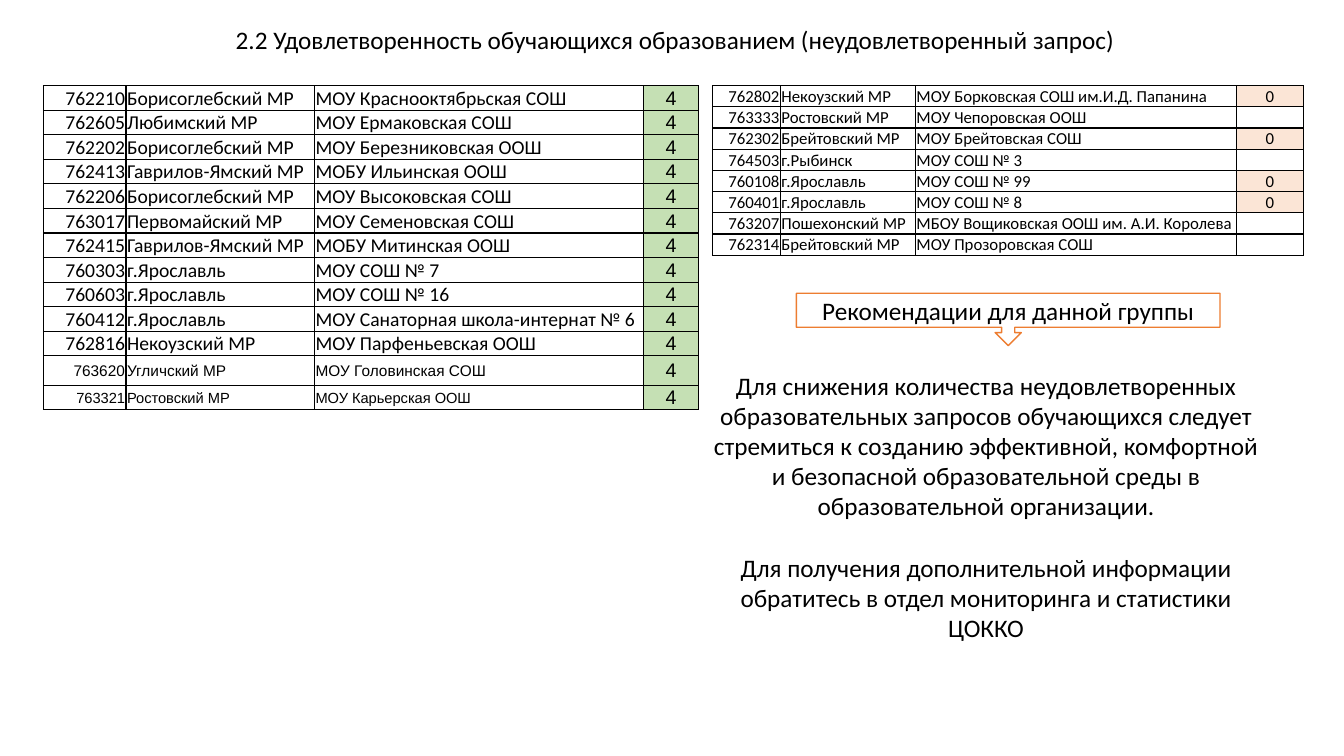
from lxml.etree import SubElement
from pptx import Presentation
from pptx.dml.color import RGBColor
from pptx.enum.shapes import MSO_SHAPE as Shape
from pptx.enum.text import MSO_ANCHOR as Anchor, MSO_AUTO_SIZE as AutoSize, PP_ALIGN as Align
from pptx.oxml.ns import qn
from pptx.util import Inches, Pt

COLORS = {"text": "000000", "paper": "FFFFFF", "accent": "ED7D31",
          "green": "C5E0B4", "peach": "FBE5D6"}

deck = Presentation()
deck.slide_width, deck.slide_height = Inches(13.33), Inches(7.5)
page = deck.slides.add_slide(deck.slide_layouts[6])


def share(left, top, width, height):
    """Turn percentages of the slide into lengths."""
    sides = (deck.slide_width, deck.slide_height) * 2
    return [round(side * part / 100) for side, part in zip(sides, (left, top, width, height))]


def write(para, text, align, size=18, face="Calibri"):
    para.alignment = align
    if not text:
        SubElement(para._p, qn("a:endParaRPr"), sz=str(size * 100))
        return
    span = para.add_run()
    span.text = text
    for name, value in {"size": Pt(size), "name": face}.items():
        setattr(span.font, name, value)
    span.font.color.rgb = RGBColor.from_string(COLORS["text"])


# Callout with the arrow
callout = page.shapes.add_shape(Shape.DOWN_ARROW_CALLOUT, *share(59.26, 38.8, 31.51, 6.93))
callout.shadow.inherit = False
callout.fill.solid()
callout.fill.fore_color.rgb = RGBColor.from_string(COLORS["paper"])
callout.line.color.rgb = RGBColor.from_string(COLORS["accent"])
callout.line.width = Pt(1)
callout.text_frame.word_wrap = True
callout.text_frame.vertical_anchor = Anchor.MIDDLE
write(callout.text_frame.paragraphs[0], "Рекомендации для данной группы", Align.CENTER)

# Title and recommendations
texts = [
    ((16.8, 2.53, 68.27, 5.33), Align.LEFT,
     ["2.2 Удовлетворенность обучающихся образованием (неудовлетворенный запрос)"]),
    ((52.06, 48.27, 42.61, 37.73), Align.CENTER,
     ["Для снижения количества неудовлетворенных образовательных запросов обучающихся "
      "следует стремиться к созданию эффективной, комфортной и безопасной "
      "образовательной среды в образовательной организации.",
      "Для получения дополнительной информации обратитесь в отдел мониторинга "
      "и статистики ЦОККО"]),
]
for place, align, lines in texts:
    box = page.shapes.add_textbox(*share(*place))
    frame = box.text_frame
    frame.word_wrap = True
    frame.auto_size = AutoSize.SHAPE_TO_FIT_TEXT
    for index, line in enumerate(lines):
        para = frame.add_paragraph() if index else frame.paragraphs[0]
        if index:
            para.space_before = Pt(22)
        write(para, line, align)

# Schools: code, district, name, score
unsatisfied = [
    ("762802", "Некоузский МР", "МОУ Борковская СОШ им.И.Д. Папанина", "0"),
    ("763333", "Ростовский МР", "МОУ Чепоровская ООШ", ""),
    ("762302", "Брейтовский МР", "МОУ Брейтовская СОШ", "0"),
    ("764503", "г.Рыбинск", "МОУ СОШ № 3", ""),
    ("760108", "г.Ярославль", "МОУ СОШ № 99", "0"),
    ("760401", "г.Ярославль", "МОУ СОШ № 8", "0"),
    ("763207", "Пошехонский МР", "МБОУ Вощиковская ООШ им. А.И. Королева", ""),
    ("762314", "Брейтовский МР", "МОУ Прозоровская СОШ", ""),
]
satisfied = [(*school, "4") for school in [
    ("762210", "Борисоглебский МР", "МОУ Краснооктябрьская СОШ"),
    ("762605", "Любимский МР", "МОУ Ермаковская СОШ"),
    ("762202", "Борисоглебский МР", "МОУ Березниковская ООШ"),
    ("762413", "Гаврилов-Ямский МР", "МОБУ Ильинская ООШ"),
    ("762206", "Борисоглебский МР", "МОУ Высоковская СОШ"),
    ("763017", "Первомайский МР", "МОУ Семеновская СОШ"),
    ("762415", "Гаврилов-Ямский МР", "МОБУ Митинская ООШ"),
    ("760303", "г.Ярославль", "МОУ СОШ № 7"),
    ("760603", "г.Ярославль", "МОУ СОШ № 16"),
    ("760412", "г.Ярославль", "МОУ Санаторная школа-интернат № 6"),
    ("762816", "Некоузский МР", "МОУ Парфеньевская ООШ"),
    ("763620", "Угличский МР", "МОУ Головинская СОШ"),
    ("763321", "Ростовский МР", "МОУ Карьерская ООШ"),
]]
tables = [
    dict(schools=unsatisfied, left=53.04, columns=[5.03, 10.05, 23.86, 5.03],
         rows=[2.77] * 8, size=12, small={}, score_face="Calibri",
         score_anchor=Anchor.BOTTOM, score_fill="peach", base_fill=None),
    dict(schools=satisfied, left=3.23, columns=[6.15, 14.03, 24.46, 4.13],
         rows=[3.2] * 11 + [3.87, 3.2], size=14, small={11: 11, 12: 10.5}, score_face="Arial",
         score_anchor=Anchor.MIDDLE, score_fill="green", base_fill="paper"),
]
aligns = [Align.RIGHT, Align.LEFT, Align.LEFT, Align.CENTER]

# Both tables
for plan in tables:
    place = share(plan["left"], 11.33, sum(plan["columns"]), sum(plan["rows"]))
    table = page.shapes.add_table(len(plan["rows"]), len(aligns), *place).table
    table.first_row = table.horz_banding = False
    for column, width in zip(table.columns, plan["columns"]):
        column.width = share(0, 0, width, 0)[2]
    for row, height in zip(table.rows, plan["rows"]):
        row.height = share(0, 0, 0, height)[3]
    for r, school in enumerate(plan["schools"]):
        for c, text in enumerate(school):
            cell = table.cell(r, c)
            is_score = c == 3
            edge = Inches(0.01)
            settings = {"margin_left": edge, "margin_right": edge, "margin_top": edge,
                        "margin_bottom": 0,
                        "vertical_anchor": plan["score_anchor"] if is_score else Anchor.MIDDLE}
            for name, value in settings.items():
                setattr(cell, name, value)
            size, face = plan["size"], "Calibri"
            if is_score:
                face = plan["score_face"]
            elif r in plan["small"]:
                size, face = plan["small"][r], "Arial"
            write(cell.text_frame.paragraphs[0], text, aligns[c], size, face)

            # Borders come before the fill in the cell properties
            properties = cell._tc.get_or_add_tcPr()
            for side in ("lnL", "lnR", "lnT", "lnB"):
                border = SubElement(properties, qn(f"a:{side}"), w=str(Pt(1)))
                paint = SubElement(border, qn("a:solidFill"))
                SubElement(paint, qn("a:srgbClr"), val=COLORS["text"])
            fill = plan["score_fill"] if is_score and text else plan["base_fill"]
            if fill:
                cell.fill.solid()
                cell.fill.fore_color.rgb = RGBColor.from_string(COLORS[fill])
            else:
                cell.fill.background()

deck.save("out.pptx")
